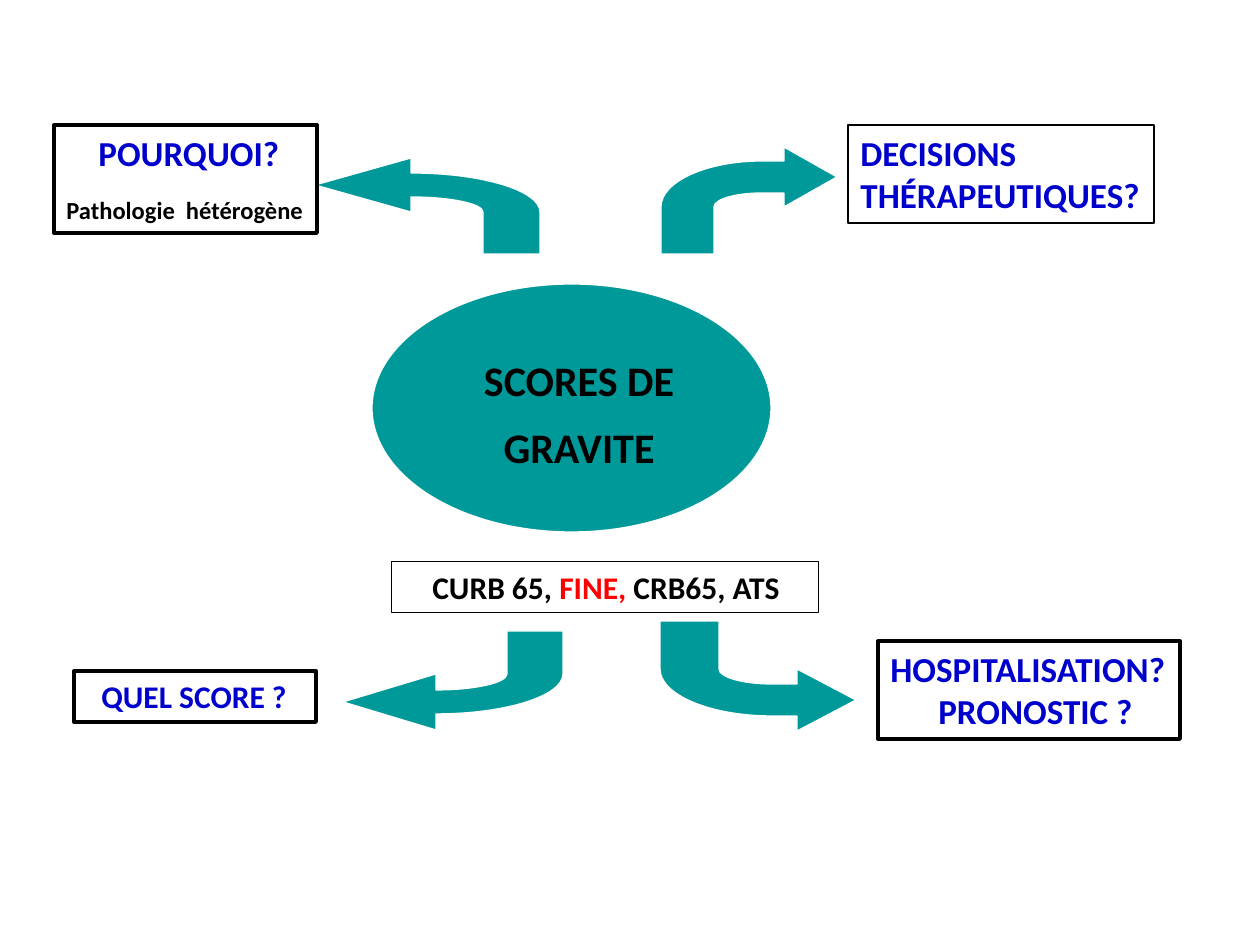
from lxml import etree
from pptx import Presentation
from pptx import util as u
from pptx.dml.color import RGBColor
from pptx.enum import shapes, text
from pptx.oxml.ns import qn

EMU_PER_PX = 914400 / 126
ARC_PULL = 0.55  # control point distance that rounds a quarter ellipse
FONT = "Calibri"
COLORS = {
    "teal": "009999",
    "white": "FFFFFF",
    "black": "000000",
    "blue": "0000CC",
    "red": "FF0000",
}


def px(value):
    return u.Emu(round(value * EMU_PER_PX))


def color(name):
    return RGBColor.from_string(COLORS[name])


def paint(shape, fill, line, line_width):
    shape.shadow.inherit = False
    if fill:
        shape.fill.solid()
        shape.fill.fore_color.rgb = color(fill)
    else:
        shape.fill.background()
    shape.line.color.rgb = color(line)
    shape.line.width = u.Pt(line_width)


def write_paragraph(paragraph, runs, size, indent=0, space_before=0,
                    align=text.PP_ALIGN.LEFT):
    """Write runs given as (text, color name) pairs; indent is in px."""
    paragraph.alignment = align
    paragraph.space_before = u.Pt(space_before)
    paragraph.font.name = FONT
    paragraph.font.size = u.Pt(size)
    paragraph.font.bold = True
    if indent:
        paragraph._p.get_or_add_pPr().set("marL", str(px(indent)))
    for words, run_color in runs:
        run = paragraph.add_run()
        run.text = words
        run.font.color.rgb = color(run_color)


def write_paragraphs(shape, paragraphs):
    frame = shape.text_frame
    frame.word_wrap = True
    frame.vertical_anchor = text.MSO_ANCHOR.TOP
    for index, options in enumerate(paragraphs):
        paragraph = frame.add_paragraph() if index else frame.paragraphs[0]
        write_paragraph(paragraph, **options)


def add_label(slide, left, top, width, height, line_width, paragraphs):
    """Add an unfilled, black-bordered box."""
    shape = slide.shapes.add_shape(
        shapes.MSO_SHAPE.RECTANGLE, px(left), px(top), px(width), px(height))
    paint(shape, None, "black", line_width)
    write_paragraphs(shape, paragraphs)
    shape.text_frame.auto_size = text.MSO_AUTO_SIZE.SHAPE_TO_FIT_TEXT


def round_segment(segment, start, end, corner):
    """Turn a straight outline segment into a curve pulled to its corner."""
    segment.tag = qn("a:cubicBezTo")
    for position, anchor in enumerate((start, end)):
        x, y = (round(a + ARC_PULL * (c - a)) for a, c in zip(anchor, corner))
        control = etree.Element(qn("a:pt"), x=str(x), y=str(y))
        segment.insert(position, control)


def add_curved_arrow(slide, tip, head_base, head_half, shaft_half,
                     bend_x, outer_x, inner_x, stem_end):
    """Add an arrow whose vertical stem bends into a horizontal head."""
    tip_x, tip_y = tip
    side = 1 if stem_end > tip_y else -1
    bend_y = tip_y + side * head_half
    outer_y = tip_y - side * shaft_half
    inner_y = tip_y + side * shaft_half
    has_shaft = bend_x != head_base
    points = [
        (head_base, tip_y - side * head_half),
        (head_base, outer_y),
        *([(bend_x, outer_y)] if has_shaft else []),
        (outer_x, bend_y),
        (outer_x, stem_end),
        (inner_x, stem_end),
        (inner_x, bend_y),
        (bend_x, inner_y),
        *([(head_base, inner_y)] if has_shaft else []),
        (head_base, bend_y),
    ]
    builder = slide.shapes.build_freeform(px(tip_x), px(tip_y))
    builder.add_line_segments([(px(x), px(y)) for x, y in points], close=True)
    arrow = builder.convert_to_shape()
    paint(arrow, "teal", "white", 0.75)

    segments = arrow._element.xpath(".//a:lnTo")
    ends = [(int(segment[0].get("x")), int(segment[0].get("y")))
            for segment in segments]
    outer = points.index((outer_x, bend_y))
    inner = points.index((bend_x, inner_y))
    round_segment(segments[outer], ends[outer - 1], ends[outer],
                  (ends[outer][0], ends[outer - 1][1]))
    round_segment(segments[inner], ends[inner - 1], ends[inner],
                  (ends[inner - 1][0], ends[inner][1]))


def add_center(slide):
    ellipse = slide.shapes.add_shape(
        shapes.MSO_SHAPE.OVAL, px(372), px(284), px(399), px(248))
    paint(ellipse, "teal", "white", 0.75)
    title = slide.shapes.add_textbox(px(451), px(354), px(256), px(110))
    write_paragraphs(title, [
        dict(runs=[(line, "black")], size=24, space_before=12.5,
             align=text.PP_ALIGN.CENTER)
        for line in ("SCORES DE", "GRAVITE")
    ])
    for paragraph in title.text_frame.paragraphs:
        paragraph.line_spacing = 0.9


def add_arrows(slide):
    add_curved_arrow(slide, (837, 177), 784, 30, 16, 762, 661, 714, 254)
    add_curved_arrow(slide, (315, 185), 411, 27, 12, 411, 540, 483, 254)
    add_curved_arrow(slide, (343, 702), 436, 28, 12, 436, 563, 507, 631)
    add_curved_arrow(slide, (856, 700), 797, 31, 16, 772, 660, 719, 621)


def add_labels(slide):
    add_label(slide, 54, 125, 263, 108, 2.25, [
        dict(runs=[("POURQUOI?", "blue")], size=20, indent=32, space_before=12.5),
        dict(runs=[("Pathologie  hétérogène", "black")], size=14, space_before=12.5),
    ])
    add_label(slide, 74, 671, 242, 51, 2.25, [
        dict(runs=[("QUEL SCORE ?", "blue")], size=18, indent=15, space_before=15),
    ])
    add_label(slide, 878, 641, 302, 98, 2.25, [
        dict(runs=[("HOSPITALISATION?", "blue")], size=20),
        dict(runs=[("PRONOSTIC ?", "blue")], size=20, indent=48),
    ])
    add_label(slide, 848, 125, 306, 98, 1.5, [
        dict(runs=[(line, "blue")], size=20)
        for line in ("DECISIONS", "THÉRAPEUTIQUES?")
    ])
    add_label(slide, 392, 562, 427, 51, 0.5, [
        dict(runs=[("CURB 65, ", "black"), ("FINE,", "red"),
                   (" CRB65, ATS", "black")], size=18, indent=28),
    ])


def main():
    presentation = Presentation()
    presentation.slide_width = px(1260)
    presentation.slide_height = px(945)
    slide = presentation.slides.add_slide(presentation.slide_layouts[6])
    add_center(slide)
    add_arrows(slide)
    add_labels(slide)
    presentation.save("out.pptx")


if __name__ == "__main__":
    main()
